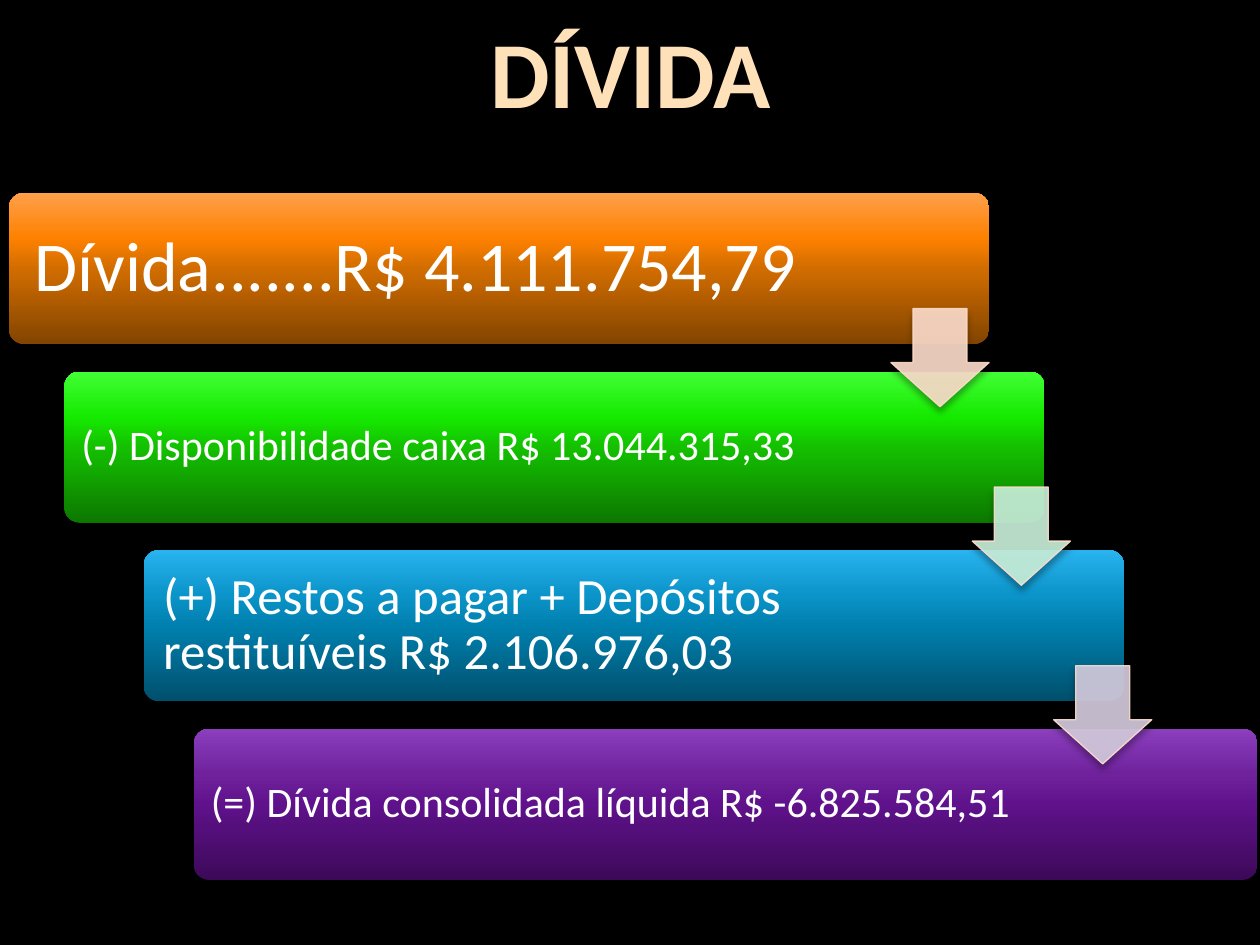
from dataclasses import dataclass

from lxml import etree
from pptx import Presentation
from pptx.dml.color import RGBColor
from pptx.enum.shapes import MSO_SHAPE
from pptx.enum.text import MSO_ANCHOR, MSO_AUTO_SIZE, PP_ALIGN
from pptx.oxml.ns import qn
from pptx.util import Cm, Pt

ROUNDED = MSO_SHAPE.ROUNDED_RECTANGLE
DOWN_ARROW = MSO_SHAPE.DOWN_ARROW
MIDDLE = MSO_ANCHOR.MIDDLE
TITLE_ONLY = 5


@dataclass(frozen=True)
class Theme:
    font: str = "Calibri"
    background: str = "000000"
    title: str = "FFE1B9"
    text: str = "FFFFFF"
    arrow_line: str = "FFDECD"
    title_size: int = 54
    large: int = 40
    medium: int = 29
    small: int = 24
    stops: tuple = (0, 50, 70, 100)
    orange: tuple = ("824400", "D16D00", "FE8100", "FFA04B")
    green: tuple = ("0C7700", "14C000", "15EA00", "42FF35")
    blue: tuple = ("004F6C", "0080AE", "0B94C9", "29B3EF")
    purple: tuple = ("3C0958", "5F128B", "6F229C", "8B3FBD")
    arrows: tuple = ("FFDECD", "CBF2DC", "D7CEE0")


THEME = Theme()

# text, type size, gradient, bar left, bar width, label width, label inset (cm)
STEPS = [
    ("Dívida.......R$ 4.111.754,79",
     THEME.large, THEME.orange, 0.18, 19.76, 16.21, 0.43),
    ("(-) Disponibilidade caixa R$ 13.044.315,33",
     THEME.small, THEME.green, 1.3, 19.76, 15.95, 0.25),
    ("(+) Restos a pagar + Depósitos restituíveis R$ 2.106.976,03",
     THEME.medium, THEME.blue, 2.9, 19.76, 15.98, 0.3),
    ("(=) Dívida consolidada líquida R$ -6.825.584,51",
     THEME.small, THEME.purple, 3.91, 21.44, 17.32, 0.25),
]
FIRST_TOP, PITCH, BAR_HEIGHT = 3.89, 3.6, 3.05
LABEL_GAP = 0.09
ARROW_LEFT, ARROW_STEP, ARROW_DROP, ARROW_SIZE = 17.96, 1.64, 2.33, 1.98


def add_color(parent, color, alpha=None):
    element = etree.SubElement(parent, qn("a:srgbClr"), val=color)
    if alpha is not None:
        etree.SubElement(element, qn("a:alpha"), val=str(alpha * 1000))


class SlideBuilder:
    def __init__(self, page, theme):
        self.page = page
        self.theme = theme
        fill = page.background.fill
        fill.solid()
        fill.fore_color.rgb = RGBColor.from_string(theme.background)

    def style(self, para, size, color):
        para.font.name = self.theme.font
        para.font.size = Pt(size)
        para.font.color.rgb = RGBColor.from_string(color)

    def title(self, text, left, top, width, height):
        box = self.page.shapes.title
        box.left, box.top, box.width, box.height = map(Cm, (left, top, width, height))
        frame = box.text_frame
        frame.text = text
        frame.word_wrap = False
        frame.auto_size = MSO_AUTO_SIZE.NONE
        para = frame.paragraphs[0]
        para.alignment = PP_ALIGN.CENTER
        para.font.bold = True
        self.style(para, self.theme.title_size, self.theme.title)

    def shape(self, kind, left, top, width, height, adjustments):
        """Add a preset shape with the soft shadow that falls straight down."""
        shape = self.page.shapes.add_shape(kind, *map(Cm, (left, top, width, height)))
        for index, value in enumerate(adjustments):
            shape.adjustments[index] = value
        shape.shadow.inherit = False
        effects = shape.element.spPr.find(qn("a:effectLst"))
        shadow = etree.SubElement(
            effects, qn("a:outerShdw"), blurRad=str(Pt(4)), dist=str(Pt(3)),
            dir="5400000", rotWithShape="0")
        add_color(shadow, "000000", 35)
        return shape

    def bar(self, left, top, width, height, colors):
        bar = self.shape(ROUNDED, left, top, width, height, [0.1])
        bar.line.fill.background()
        bar.fill.gradient()
        bar.fill.gradient_angle = 90
        stops = bar.element.spPr.find(".//" + qn("a:gsLst"))
        for stop in list(stops):
            stops.remove(stop)
        for position, color in zip(self.theme.stops, colors):
            stop = etree.SubElement(stops, qn("a:gs"), pos=str(position * 1000))
            add_color(stop, color)

    def label(self, text, size, left, top, width, height, inset):
        box = self.page.shapes.add_textbox(*map(Cm, (left, top, width, height)))
        frame = box.text_frame
        frame.word_wrap = True
        frame.vertical_anchor = MIDDLE
        frame.margin_left = frame.margin_right = Cm(inset)
        frame.margin_top = frame.margin_bottom = Cm(inset)
        para = frame.paragraphs[0]
        para.text = text
        para.line_spacing = 0.9
        self.style(para, size, self.theme.text)

    def arrow(self, left, top, size, color):
        arrow = self.shape(DOWN_ARROW, left, top, size, size, [0.55, 0.45])
        arrow.line.width = Pt(0.75)
        arrow.fill.solid()
        arrow.fill.fore_color.rgb = RGBColor.from_string(color)
        arrow.line.color.rgb = RGBColor.from_string(self.theme.arrow_line)
        for element in arrow.element.spPr.findall(".//" + qn("a:solidFill")):
            etree.SubElement(element[0], qn("a:alpha"), val="90000")


def main():
    deck = Presentation()
    deck.slide_width, deck.slide_height = Cm(25.4), Cm(19.05)
    page = deck.slides.add_slide(deck.slide_layouts[TITLE_ONLY])
    builder = SlideBuilder(page, THEME)
    builder.title("DÍVIDA", 9.6, 0.15, 6.22, 2.57)

    for index, (text, size, colors, left, width, label_width, inset) in enumerate(STEPS):
        top = FIRST_TOP + index * PITCH
        builder.bar(left, top, width, BAR_HEIGHT, colors)
        builder.label(text, size, left + LABEL_GAP, top + LABEL_GAP,
                      label_width, BAR_HEIGHT - 2 * LABEL_GAP, inset)

    for index, color in enumerate(THEME.arrows):
        builder.arrow(ARROW_LEFT + index * ARROW_STEP,
                      FIRST_TOP + index * PITCH + ARROW_DROP, ARROW_SIZE, color)

    deck.save("out.pptx")


if __name__ == "__main__":
    main()
